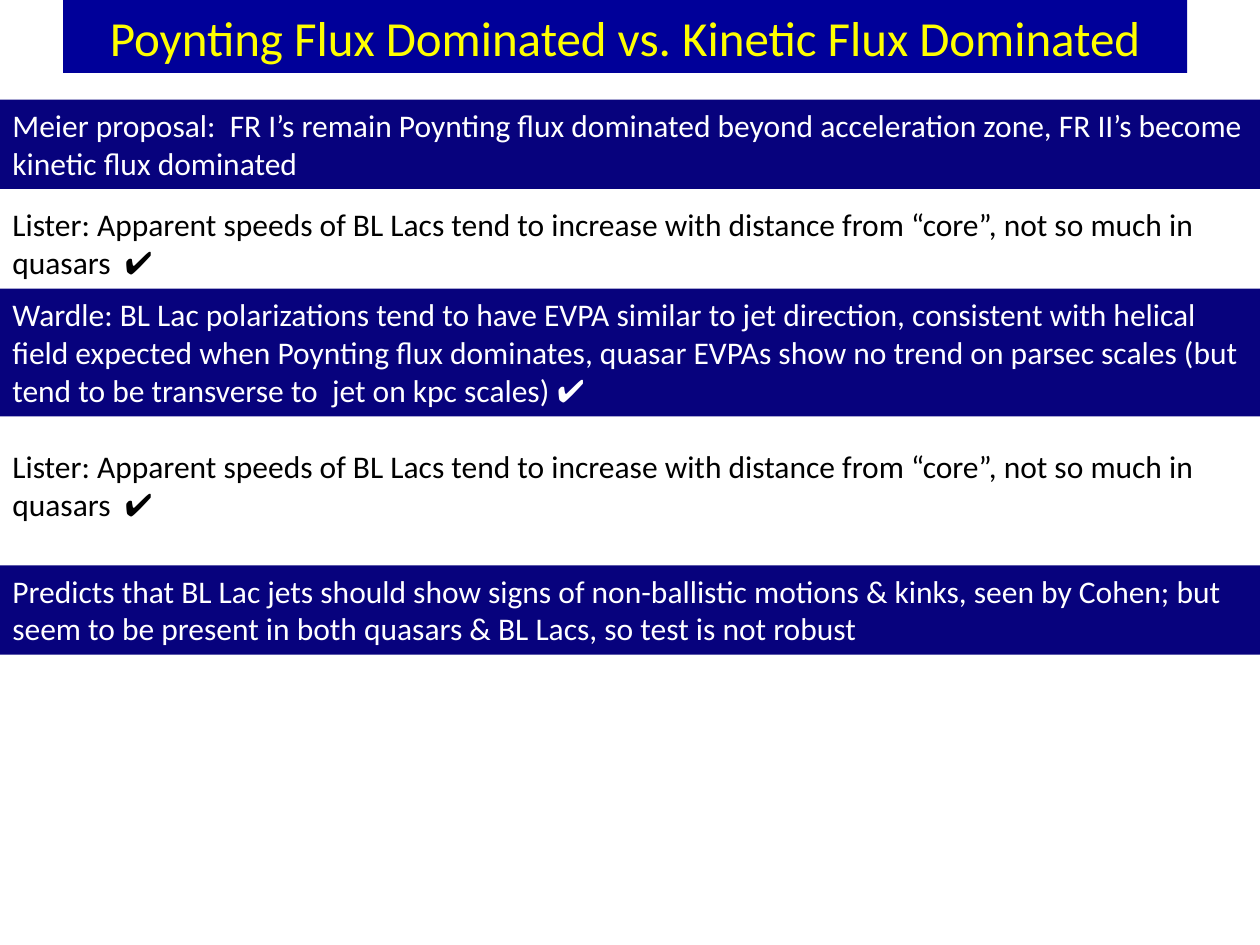
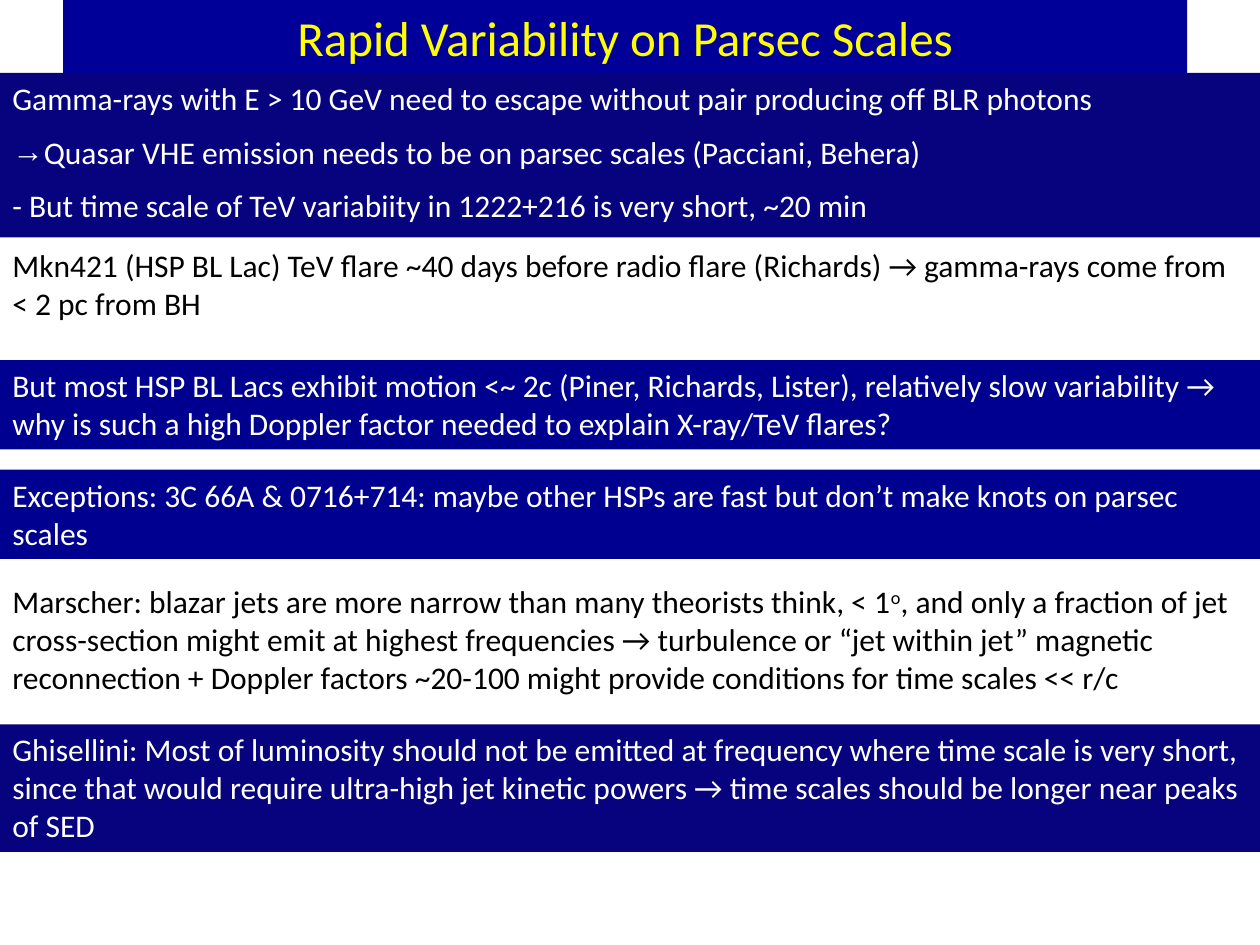
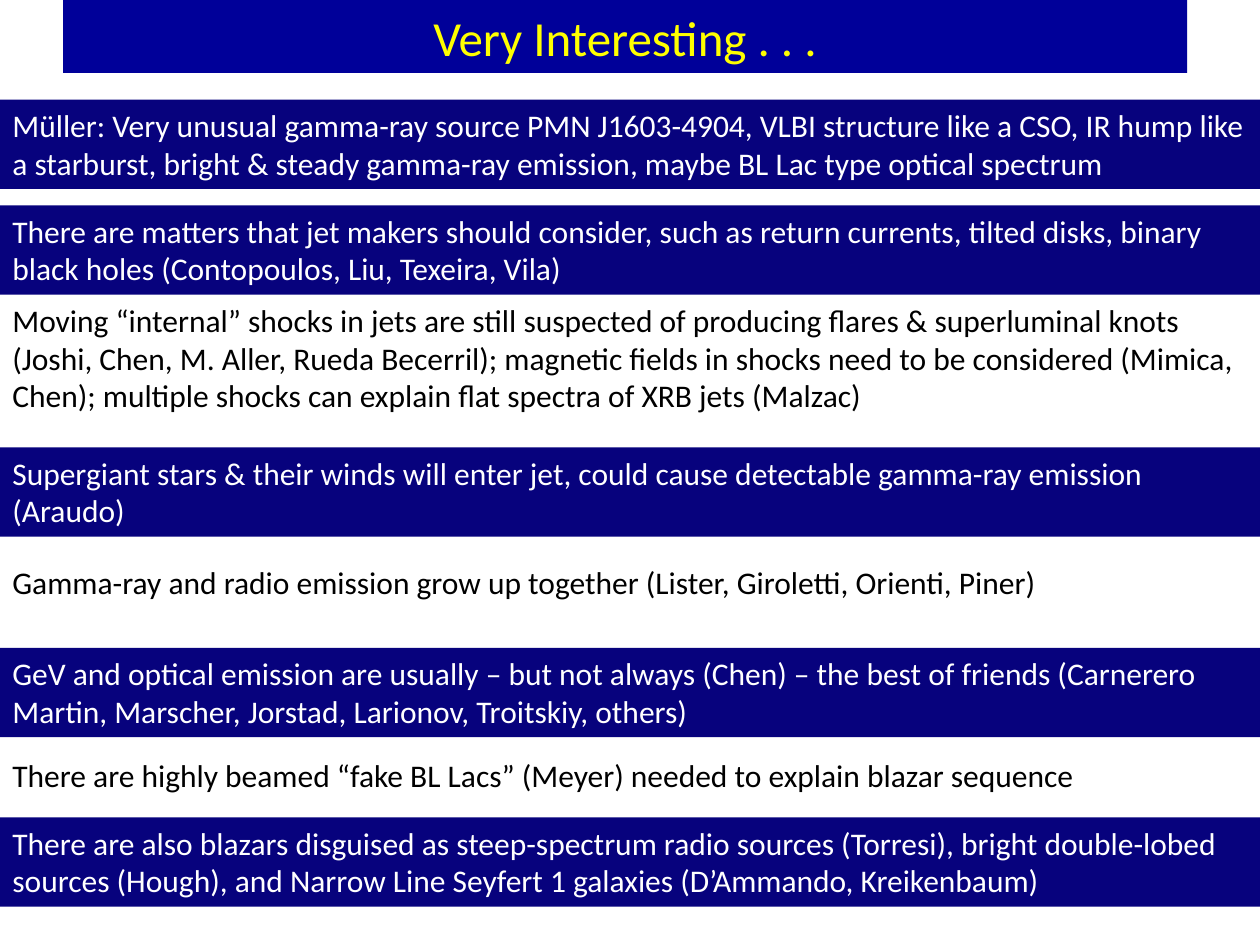
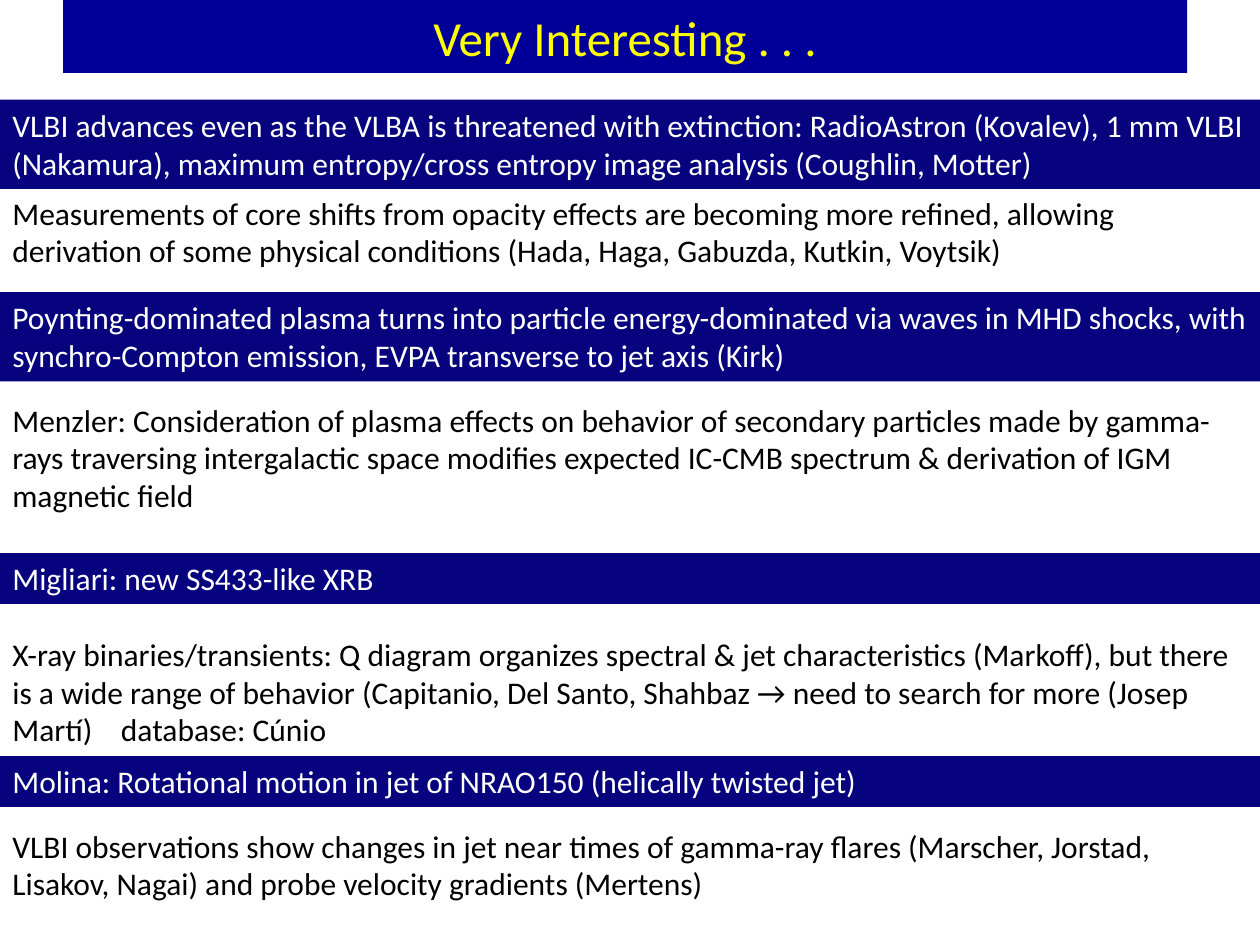
from dataclasses import dataclass

from pptx import Presentation
from pptx.dml.color import RGBColor
from pptx.enum.shapes import MSO_SHAPE
from pptx.enum.text import MSO_ANCHOR, MSO_AUTO_SIZE, PP_ALIGN
from pptx.oxml import parse_xml
from pptx.oxml.ns import nsdecls, qn
from pptx.util import Cm, Pt

RECTANGLE = MSO_SHAPE.RECTANGLE
TOP, MIDDLE = MSO_ANCHOR.TOP, MSO_ANCHOR.MIDDLE
LEFT, CENTER = PP_ALIGN.LEFT, PP_ALIGN.CENTER
NO_FIT, GROW = MSO_AUTO_SIZE.NONE, MSO_AUTO_SIZE.SHAPE_TO_FIT_TEXT

PAGE_WIDTH, PAGE_HEIGHT = 25.4, 19.05
TITLE_ONLY = 5
FONT, SYMBOL_FONT = "Calibri", "Arial"
TITLE_SIZE, BODY_SIZE, PARA_GAP = 28, 18, 9
TITLE_FILL, TITLE_COLOR = "000099", "FFFF00"
NAVY, BLUE = "07027D", "000090"
WHITE, BLACK = "FFFFFF", "000000"
MARGINS, LINE_HEIGHT, GAP_HEIGHT = 0.25, 0.775, 0.37
TAB_STOP = 2.19


@dataclass(frozen=True)
class Span:
    text: str
    font: str = ""
    raised: bool = False


@dataclass(frozen=True)
class Para:
    spans: tuple[Span, ...]
    bullet: str = ""


@dataclass(frozen=True)
class Statement:
    top: float
    lines: int
    paras: tuple[Para, ...]
    fill: str = ""

    @property
    def height(self) -> float:
        gaps = len(self.paras) - 1
        return MARGINS + self.lines * LINE_HEIGHT + gaps * GAP_HEIGHT


@dataclass(frozen=True)
class Page:
    title: str
    statements: tuple[Statement, ...]


def para(*parts: str | Span, bullet: str = "") -> Para:
    spans = tuple(Span(part) if isinstance(part, str) else part for part in parts)
    return Para(spans, bullet)


def plain(top: float, lines: int, *parts: str | Span) -> Statement:
    return Statement(top, lines, (para(*parts),))


def band(top: float, lines: int, *parts: str | Span, fill: str = NAVY) -> Statement:
    return Statement(top, lines, (para(*parts),), fill)


CHECK = Span("✔", font=SYMBOL_FONT)
LISTER = (
    "Lister: Apparent speeds of BL Lacs tend to increase with distance from “core”, "
    "not so much in quasars  "
)

PAGES = (
    Page("Poynting Flux Dominated vs. Kinetic Flux Dominated", (
        band(2.01, 2, "Meier proposal:  FR I’s remain Poynting flux dominated beyond "
             "acceleration zone, FR II’s become kinetic flux dominated"),
        plain(4.01, 2, LISTER, CHECK),
        band(5.82, 3, "Wardle: BL Lac polarizations tend to have EVPA similar to jet "
             "direction, consistent with helical field expected when Poynting flux "
             "dominates, quasar EVPAs show no trend on parsec scales (but tend to be "
             "transverse to  jet on kpc scales) ", CHECK),
        plain(8.89, 2, LISTER, CHECK),
        band(11.4, 2, "Predicts that BL Lac jets should show signs of non-ballistic "
             "motions & kinks, seen by Cohen; but seem to be present in both quasars & "
             "BL Lacs, so test is not robust"),
    )),
    Page("Rapid Variability on Parsec Scales", (
        Statement(1.47, 3, (
            para("Gamma-rays with E > 10 GeV need to escape without pair producing "
                 "off BLR photons"),
            para("Quasar VHE emission needs to be on parsec scales (Pacciani, Behera)",
                 bullet="→"),
            para("- But time scale of TeV variabiity in 1222+216 is very short, ~20 min"),
        ), NAVY),
        plain(4.83, 2, "Mkn421 (HSP BL Lac) TeV flare ~40 days before radio flare "
              "(Richards) → gamma-rays come from < 2 pc from BH"),
        band(7.26, 2, "But most HSP BL Lacs exhibit motion <~ 2c (Piner, Richards, "
             "Lister), relatively slow variability → why is such a high Doppler factor "
             "needed to explain X-ray/TeV flares?", fill=BLUE),
        band(9.47, 2, "Exceptions: 3C 66A & 0716+714: maybe other HSPs are fast but "
             "don’t make knots on parsec scales", fill=BLUE),
        plain(11.61, 3, "Marscher: blazar jets are more narrow than many theorists "
              "think, < 1", Span("o", raised=True), ", and only a fraction of jet "
              "cross-section might emit at highest frequencies → turbulence or “jet "
              "within jet” magnetic reconnection + Doppler factors ~20-100 might "
              "provide conditions for time scales << r/c"),
        band(14.6, 3, "Ghisellini: Most of luminosity should not be emitted at "
             "frequency where time scale is very short, since that would require "
             "ultra-high jet kinetic powers → time scales should be longer near peaks "
             "of SED"),
    )),
    Page("Very Interesting . . .", (
        band(2.01, 2, "Müller: Very unusual gamma-ray source PMN J1603-4904, VLBI "
             "structure like a CSO, IR hump like a starburst, bright & steady gamma-ray "
             "emission, maybe BL Lac type optical spectrum"),
        band(4.14, 2, "There are matters that jet makers should consider, such as "
             "return currents, tilted disks, binary black holes (Contopoulos, Liu, "
             "Texeira, Vila)"),
        plain(5.94, 3, "Moving “internal” shocks in jets are still suspected of "
              "producing flares & superluminal knots (Joshi, Chen, M. Aller, Rueda "
              "Becerril); magnetic fields in shocks need to be considered (Mimica, "
              "Chen); multiple shocks can explain flat spectra of XRB jets (Malzac)"),
        band(9.02, 2, "Supergiant stars & their winds will enter jet, could cause "
             "detectable gamma-ray emission (Araudo)"),
        plain(11.23, 1, "Gamma-ray and radio emission grow up together (Lister, "
              "Giroletti, Orienti, Piner)"),
        band(13.06, 2, "GeV and optical emission are usually – but not always (Chen) – "
             "the best of friends (Carnerero Martin, Marscher, Jorstad, Larionov, "
             "Troitskiy, others)"),
        plain(15.11, 1, "There are highly beamed “fake BL Lacs” (Meyer) needed to "
              "explain blazar sequence"),
        band(16.48, 2, "There are also blazars disguised as steep-spectrum radio "
             "sources (Torresi), bright double-lobed sources (Hough), and Narrow Line "
             "Seyfert 1 galaxies (D’Ammando, Kreikenbaum)"),
    )),
    Page("Very Interesting . . .", (
        band(2.01, 2, "VLBI advances even as the VLBA is threatened with extinction: "
             "RadioAstron (Kovalev), 1 mm VLBI (Nakamura), maximum entropy/cross "
             "entropy image analysis (Coughlin, Motter)"),
        plain(3.78, 2, "Measurements of core shifts from opacity effects are becoming "
              "more refined, allowing derivation of some physical conditions (Hada, "
              "Haga, Gabuzda, Kutkin, Voytsik)"),
        band(5.89, 2, "Poynting-dominated plasma turns into particle energy-dominated "
             "via waves in MHD shocks, with synchro-Compton emission, EVPA transverse "
             "to jet axis (Kirk)"),
        plain(7.95, 3, "Menzler: Consideration of plasma effects on behavior of "
              "secondary particles made by gamma-rays traversing intergalactic space "
              "modifies expected IC-CMB spectrum & derivation of IGM magnetic field"),
        band(11.15, 1, "Migliari: new SS433-like XRB"),
        plain(12.67, 3, "X-ray binaries/transients: Q diagram organizes spectral & jet "
              "characteristics (Markoff), but there is a wide range of behavior "
              "(Capitanio, Del Santo, Shahbaz → need to search for more (Josep Martí)"
              "\tdatabase: Cúnio"),
        band(15.24, 1, "Molina: Rotational motion in jet of NRAO150 (helically twisted "
             "jet)"),
        plain(16.54, 2, "VLBI observations show changes in jet near times of gamma-ray "
              "flares (Marscher, Jorstad, Lisakov, Nagai) and probe velocity gradients "
              "(Mertens)"),
    )),
)


def rgb(value: str) -> RGBColor:
    return RGBColor.from_string(value)


def paint(box, value: str) -> None:
    box.fill.solid()
    box.fill.fore_color.rgb = rgb(value)


def style_paragraph(paragraph, size: int, color: str, align) -> None:
    paragraph.alignment = align
    paragraph.font.name = FONT
    paragraph.font.size = Pt(size)
    paragraph.font.color.rgb = rgb(color)


def add_property(paragraph, xml: str) -> None:
    properties = paragraph._p.get_or_add_pPr()
    properties.find(qn("a:defRPr")).addprevious(parse_xml(xml))


def set_bullet(paragraph, symbol: str) -> None:
    properties = paragraph._p.get_or_add_pPr()
    properties.set("marL", "0")
    properties.set("indent", "0")
    add_property(paragraph, f'<a:buFont {nsdecls("a")} typeface="{SYMBOL_FONT}"/>')
    add_property(paragraph, f'<a:buChar {nsdecls("a")} char="{symbol}"/>')


def set_tab(paragraph) -> None:
    add_property(paragraph, f'<a:tabLst {nsdecls("a")}>'
                 f'<a:tab pos="{Cm(TAB_STOP)}" algn="l"/></a:tabLst>')


def write_para(paragraph, content: Para, color: str) -> None:
    style_paragraph(paragraph, BODY_SIZE, color, LEFT)
    if content.bullet:
        set_bullet(paragraph, content.bullet)
    if any("\t" in span.text for span in content.spans):
        set_tab(paragraph)
    for span in content.spans:
        run = paragraph.add_run()
        run.text = span.text
        if span.font:
            run.font.name = span.font
        if span.raised:
            run._r.get_or_add_rPr().set("baseline", "30000")


def draw_statement(slide, statement: Statement) -> None:
    place = (Cm(0), Cm(statement.top), Cm(PAGE_WIDTH), Cm(statement.height))
    if statement.fill:
        box = slide.shapes.add_shape(RECTANGLE, *place)
        box.shadow.inherit = False
        box.line.fill.background()
        paint(box, statement.fill)
    else:
        box = slide.shapes.add_textbox(*place)
    frame = box.text_frame
    frame.word_wrap = True
    frame.auto_size = GROW
    frame.vertical_anchor = TOP
    color = WHITE if statement.fill else BLACK
    for index, content in enumerate(statement.paras):
        paragraph = frame.add_paragraph() if index else frame.paragraphs[0]
        write_para(paragraph, content, color)
        if index:
            paragraph.space_before = Pt(PARA_GAP)


def draw_title(slide, text: str) -> None:
    title = slide.shapes.title
    title.left, title.top = Cm(1.27), Cm(0)
    title.width, title.height = Cm(22.66), Cm(1.47)
    paint(title, TITLE_FILL)
    frame = title.text_frame
    frame.text = text
    frame.word_wrap = True
    frame.auto_size = NO_FIT
    frame.vertical_anchor = MIDDLE
    style_paragraph(frame.paragraphs[0], TITLE_SIZE, TITLE_COLOR, CENTER)


def main() -> None:
    deck = Presentation()
    deck.slide_width, deck.slide_height = Cm(PAGE_WIDTH), Cm(PAGE_HEIGHT)
    for page in PAGES:
        slide = deck.slides.add_slide(deck.slide_layouts[TITLE_ONLY])
        draw_title(slide, page.title)
        for statement in page.statements:
            draw_statement(slide, statement)
    deck.save("out.pptx")


if __name__ == "__main__":
    main()
